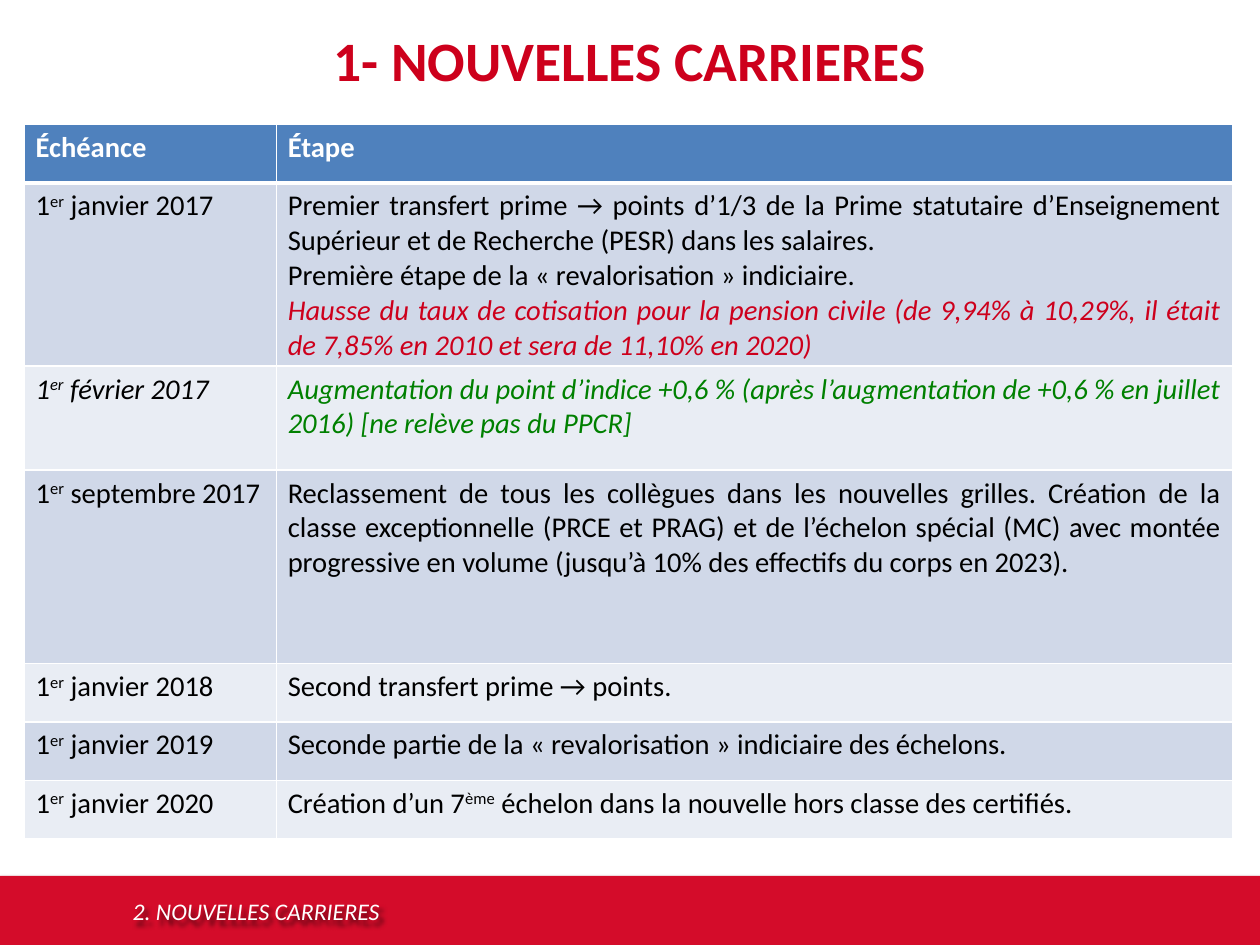
from lxml.etree import SubElement
from pptx import Presentation
from pptx.dml.color import RGBColor as Rgb
from pptx.enum.shapes import MSO_SHAPE as Shape
from pptx.enum.text import MSO_ANCHOR as Anchor, MSO_AUTO_SIZE as Auto, PP_ALIGN as Align
from pptx.oxml import parse_xml
from pptx.oxml.ns import nsdecls, qn
from pptx.util import Pt

WIDE, HIGH = 793.7, 595.28
RED, GREEN, WHITE, BLACK = "CD001C", "008000", "FFFFFF", "000000"
BLUE, DARK, PALE = "4F81BD", "D0D8E8", "E9EDF4"
COLS = [158.9, 602.4]
LOW = 36.7
JUST = dict(align=Align.JUSTIFY)
ROWS = [
    (LOW, [("Échéance", {})], [("Étape", {})]),
    (115.5, [("1^er^ janvier 2017", {})], [
        ("Premier transfert prime → points d’1/3 de la Prime statutaire d’Enseignement "
         "Supérieur et de Recherche (PESR) dans les salaires.", JUST),
        ("Première étape de la « revalorisation » indiciaire.", JUST),
        ("Hausse du taux de cotisation pour la pension civile (de 9,94% à 10,29%, il était "
         "de 7,85% en 2010 et sera de 11,10% en 2020)", dict(JUST, color=RED, italic=True))]),
    (65.5, [("1^er^ février 2017", dict(italic=True))], [
        ("Augmentation du point d’indice +0,6 % (après l’augmentation de +0,6 % en juillet "
         "2016) [ne relève pas du PPCR]", dict(JUST, color=GREEN, italic=True))]),
    (122, [("1^er^ septembre 2017", {})], [
        ("Reclassement de tous les collègues dans les nouvelles grilles. Création de la "
         "classe exceptionnelle (PRCE et PRAG) et de l’échelon spécial (MC) avec montée "
         "progressive en volume (jusqu’à 10% des effectifs du corps en 2023).", JUST)]),
    (LOW, [("1^er^ janvier 2018", {})], [("Second transfert prime → points.", {})]),
    (LOW, [("1^er^ janvier 2019", {})],
     [("Seconde partie de la « revalorisation » indiciaire des échelons.", {})]),
    (LOW, [("1^er^ janvier 2020", {})],
     [("Création d’un 7^ème^ échelon dans la nouvelle hors classe des certifiés.", {})]),
]


def paint(fill, color):
    fill.solid()
    fill.fore_color.rgb = Rgb.from_string(color)


def write(para, text, size=18, color=BLACK, bold=False, italic=False, align=Align.LEFT):
    """Fill a paragraph; text between carets is raised."""
    para.alignment = align
    for pos, part in enumerate(text.split("^")):
        run = para.add_run()
        run.text = part
        font = run.font
        font.name, font.size, font.bold, font.italic = "Calibri", Pt(size), bold, italic
        font.color.rgb = Rgb.from_string(color)
        if pos % 2:
            font._element.set("baseline", "30000")


def inset(frame):
    frame.margin_left = frame.margin_right = Pt(7.92)
    frame.margin_top = frame.margin_bottom = Pt(4.32)
    frame.word_wrap = True


def shade(shape, blur, dist, angle, alpha):
    shape.shadow.inherit = False
    effects = shape._element.spPr.find(qn("a:effectLst"))
    outer = SubElement(effects, qn("a:outerShdw"), blurRad=str(Pt(blur)), dist=str(Pt(dist)),
                       dir=str(angle * 60000), algn="tl", rotWithShape="0")
    tint = SubElement(outer, qn("a:srgbClr"), val=BLACK)
    SubElement(tint, qn("a:alpha"), val=str(alpha * 1000))


def edge(cell, top, bottom):
    props = cell._tc.get_or_add_tcPr()
    sides = [("lnL", 1), ("lnR", 1), ("lnT", top), ("lnB", bottom)]
    for pos, (side, width) in enumerate(sides):
        props.insert(pos, parse_xml(
            f'<a:{side} {nsdecls("a")} w="{Pt(width)}"><a:solidFill>'
            f'<a:srgbClr val="{WHITE}"/></a:solidFill></a:{side}>'))


def add_bar(slide):
    bar = slide.shapes.add_shape(Shape.RECTANGLE, 0, Pt(551.7), Pt(WIDE), Pt(43.5))
    paint(bar.fill, "D40C2A")
    bar.line.fill.background()
    shade(bar, 3.1, 1.8, 90, 35)


def add_foot(slide):
    box = slide.shapes.add_textbox(Pt(75.6), Pt(560.6), Pt(529.92), Pt(26.64))
    inset(box.text_frame)
    write(box.text_frame.paragraphs[0], "2. NOUVELLES CARRIERES", 15, WHITE, italic=True)
    shade(box, 3, 3, 45, 60)


def add_grid(slide):
    table = slide.shapes.add_table(len(ROWS), len(COLS), Pt(15.2), Pt(78.5),
                                   Pt(sum(COLS)), Pt(sum(row[0] for row in ROWS))).table
    for col, width in zip(table.columns, COLS):
        col.width = Pt(width)
    for num, (height, *cells) in enumerate(ROWS):
        table.rows[num].height = Pt(height)
        base = {} if num else dict(color=WHITE, bold=True)
        for col, paras in enumerate(cells):
            cell = table.cell(num, col)
            paint(cell.fill, (DARK if num % 2 else PALE) if num else BLUE)
            edge(cell, 3 if num == 1 else 1, 1 if num else 3)
            frame = cell.text_frame
            for pos, (text, style) in enumerate(paras):
                para = frame.add_paragraph() if pos else frame.paragraphs[0]
                write(para, text, **{**base, **style})


def set_title(slide):
    title = slide.shapes.title
    title.left, title.top, title.width, title.height = 0, Pt(11.52), Pt(WIDE), Pt(51.84)
    frame = title.text_frame
    inset(frame)
    frame.auto_size = Auto.NONE
    frame.vertical_anchor = Anchor.MIDDLE
    write(frame.paragraphs[0], "1- NOUVELLES CARRIERES", 35, RED, bold=True, align=Align.CENTER)


def main():
    deck = Presentation()
    deck.slide_width, deck.slide_height = Pt(WIDE), Pt(HIGH)
    slide = deck.slides.add_slide(deck.slide_layouts[5])
    add_bar(slide)
    add_foot(slide)
    add_grid(slide)
    set_title(slide)
    deck.save("out.pptx")


if __name__ == "__main__":
    main()
